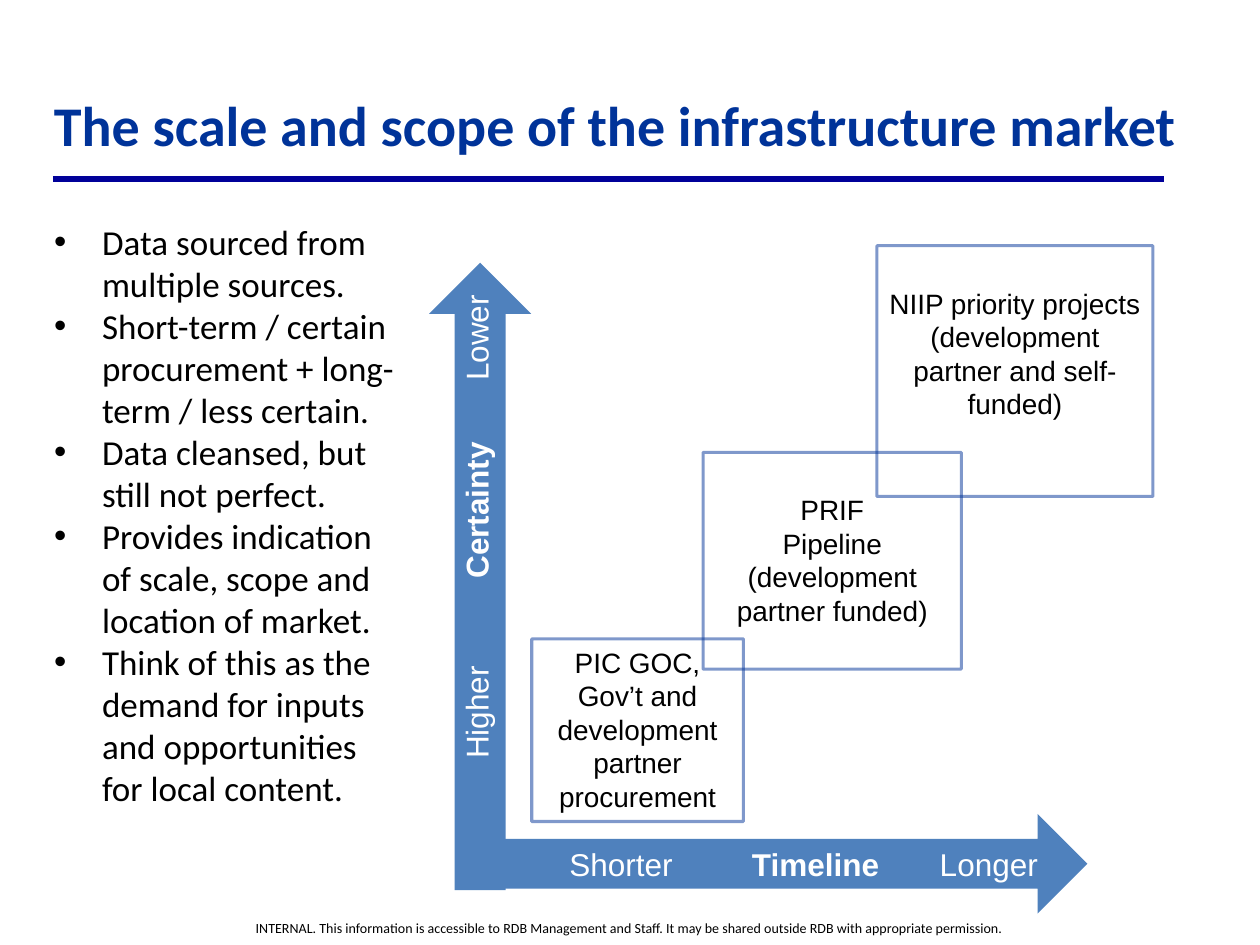
from lxml import etree
from pptx import Presentation
from pptx.dml.color import RGBColor
from pptx.enum import shapes, text
from pptx.oxml.ns import qn
from pptx.util import Inches, Pt

NAVY, BLUE, BLACK, WHITE = "003399", "4F81BD", "000000", "FFFFFF"

TITLE = "The scale and scope of the infrastructure market"
FOOTER = ("INTERNAL. This information is accessible to RDB Management and Staff. "
          "It may be shared outside RDB with appropriate permission.")
POINTS = [
    "Data sourced from multiple sources.",
    "Short-term / certain procurement + long-term / less certain.",
    "Data cleansed, but still not perfect.",
    "Provides indication of scale, scope and location of market.",
    "Think of this as the demand for inputs and opportunities for local content.",
]
# Axes: arrow place, label place, rotation, (low end, name, high end), tab stops
AXES = [
    ((1.32, 4.17, 4.98, 0.81), (1.76, 3.9, 4.04, 0.4), 270,
     ("Higher", "Certainty", "Lower"), (1.43, 3.0)),
    ((3.74, 6.46, 4.89, 0.79), (4.42, 6.66, 4.04, 0.4), 0,
     ("Shorter", "Timeline", "Longer"), (1.45, 2.94)),
]
# Stages: place, top inset, paragraphs
STAGES = [
    ((5.58, 3.59, 2.05, 1.72), 0.32,
     ["PRIF", "Pipeline (development partner funded)"]),
    ((6.96, 1.95, 2.19, 1.99), 0.32,
     ["NIIP priority projects (development partner and self-funded)"]),
    ((4.22, 5.07, 1.68, 1.45), 0.05,
     ["PIC GOC, Gov’t and development partner procurement"]),
]

prs = Presentation()
prs.slide_width, prs.slide_height = Inches(10), Inches(7.5)
slide = prs.slides.add_slide(prs.slide_layouts[6])


def rgb(value):
    return RGBColor.from_string(value)


def add_run(paragraph, words, size, font, color, bold=False):
    run = paragraph.add_run()
    run.text = words
    run.font.size, run.font.name, run.font.bold = Pt(size), font, bold
    run.font.color.rgb = rgb(color)


def paragraphs(frame, count):
    return [frame.paragraphs[0]] + [frame.add_paragraph() for _ in range(count - 1)]


def add_textbox(place, inset=True):
    box = slide.shapes.add_textbox(*map(Inches, place))
    frame = box.text_frame
    frame.word_wrap = True
    if not inset:
        frame.margin_left = frame.margin_right = 0
        frame.margin_top = frame.margin_bottom = 0
    return box


def add_shape(kind, place):
    shape = slide.shapes.add_shape(kind, *map(Inches, place))
    shape.shadow.inherit = False
    return shape


def set_bullet(paragraph, indent):
    props = paragraph._p.get_or_add_pPr()
    props.set("marL", str(Inches(indent)))
    props.set("indent", str(-Inches(indent)))
    etree.SubElement(props, qn("a:buFont"), typeface="Arial")
    etree.SubElement(props, qn("a:buChar"), char="•")


def set_tabs(paragraph, stops):
    tabs = etree.SubElement(paragraph._p.get_or_add_pPr(), qn("a:tabLst"))
    for stop in stops:
        etree.SubElement(tabs, qn("a:tab"), pos=str(Inches(stop)), algn="l")


# Footer, title and rule
footer = add_textbox((2.03, 7.3, 5.97, 0.13), inset=False)
add_run(footer.text_frame.paragraphs[0], FOOTER, 8, "Calibri", BLACK)
title = add_textbox((0.33, 0.67, 9.33, 0.64))
add_run(title.text_frame.paragraphs[0], TITLE, 32, "Calibri", NAVY, True)
rule = slide.shapes.add_connector(shapes.MSO_CONNECTOR.STRAIGHT, Inches(0.42),
                                  Inches(1.42), Inches(9.24), Inches(1.42))
rule.line.color.rgb, rule.line.width = rgb("000099"), Pt(3)
etree.SubElement(rule._element.spPr, qn("a:effectLst"))

# Bulleted points
body = add_textbox((0.43, 1.75, 2.72, 5.08), inset=False).text_frame
for paragraph, point in zip(paragraphs(body, len(POINTS)), POINTS):
    set_bullet(paragraph, 0.38)
    add_run(paragraph, point, 20, "Calibri", BLACK)

# Axis arrows with their labels
for arrow_place, label_place, rotation, labels, stops in AXES:
    arrow = add_shape(shapes.MSO_SHAPE.RIGHT_ARROW, arrow_place)
    arrow.fill.solid()
    arrow.fill.fore_color.rgb = rgb(BLUE)
    arrow.line.fill.background()
    label = add_textbox(label_place)
    arrow.rotation = label.rotation = rotation
    paragraph = label.text_frame.paragraphs[0]
    set_tabs(paragraph, stops)
    for i, words in enumerate(labels):
        add_run(paragraph, "\t" + words if i else words, 18, "Arial", WHITE, i == 1)

# Overlapping project stages
for place, top_inset, lines in STAGES:
    stage = add_shape(shapes.MSO_SHAPE.RECTANGLE, place)
    stage.fill.background()
    stage.line.color.rgb, stage.line.width = rgb(NAVY), Pt(1.75)
    line_color = stage.line._ln.find(".//" + qn("a:srgbClr"))
    etree.SubElement(line_color, qn("a:alpha"), val="50000")
    frame = stage.text_frame
    frame.word_wrap = True
    frame.vertical_anchor = text.MSO_ANCHOR.TOP
    frame.margin_top = Inches(top_inset)
    for paragraph, words in zip(paragraphs(frame, len(lines)), lines):
        paragraph.alignment = text.PP_ALIGN.CENTER
        add_run(paragraph, words, 16, "Arial", BLACK)

prs.save("out.pptx")
